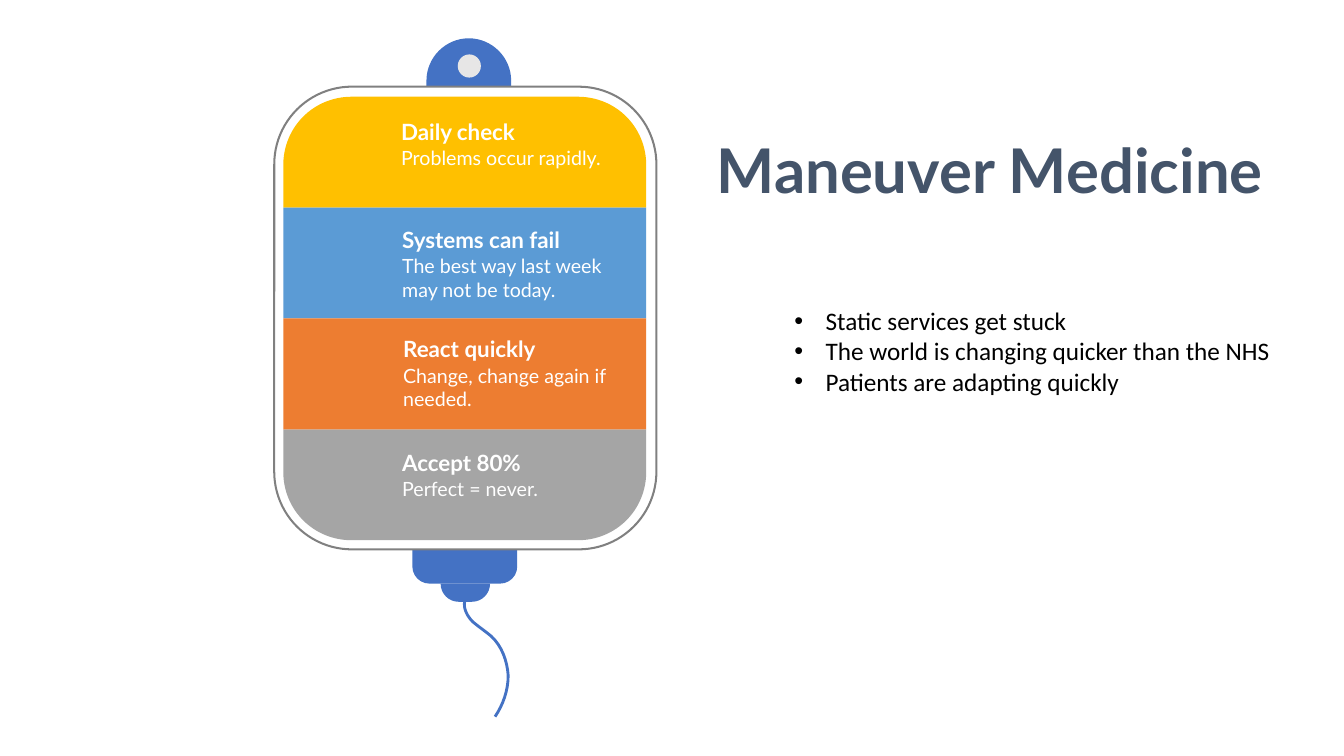
from lxml.etree import SubElement
from pptx import Presentation
from pptx.dml.color import RGBColor
from pptx.enum.shapes import MSO_SHAPE
from pptx.enum.text import MSO_AUTO_SIZE
from pptx.oxml.ns import qn
from pptx.util import Inches, Pt

COLORS = {
    "gold": "FFC000", "sky": "5B9BD5", "orange": "ED7D31", "gray": "A5A5A5",
    "edge": "808080", "blue": "4472C4", "hole": "E7E6E6",
    "title": "44546A", "white": "FFFFFF", "black": "000000",
}
color = {name: RGBColor.from_string(code) for name, code in COLORS.items()}

deck = Presentation()
deck.slide_width, deck.slide_height = Inches(13.33), Inches(7.5)
shapes = deck.slides.add_slide(deck.slide_layouts[6]).shapes


def add_outline(start, parts, close):
    """Draw an outline: a part of one point is a line, of three a cubic curve."""
    pen = shapes.build_freeform(Inches(start[0]), Inches(start[1]))
    points = [(Inches(x), Inches(y)) for part in parts for x, y in part]
    pen.add_line_segments(points, close=close)
    shape = pen.convert_to_shape()
    shape.shadow.inherit = False
    lines = iter(list(shape._element.iter(qn("a:lnTo"))))
    for part in parts:
        first, *rest = [next(lines) for point in part]
        if rest:
            first.tag = qn("a:cubicBezTo")
            for line in rest:
                first.append(line[0])
                line.getparent().remove(line)
    return shape


def add_text(left, top, width, height, lines, size, tone, font="Lato", bold=False, wrap=False):
    box = shapes.add_textbox(Inches(left), Inches(top), Inches(width), Inches(height))
    frame = box.text_frame
    frame.word_wrap = wrap
    frame.auto_size = MSO_AUTO_SIZE.NONE if wrap else MSO_AUTO_SIZE.SHAPE_TO_FIT_TEXT
    frame.text = "\n".join(lines)
    for para in frame.paragraphs:
        para.font.size = Pt(size)
        para.font.name = font
        para.font.bold = bold
        para.font.color.rgb = color[tone]
    return frame


# Gold and gray end bands: the gray one is the gold one turned upside down
LEFT, RIGHT, TOP, LOW = 2.81, 6.41, 0.96, 5.36
BAND_H, CURVE, PULL = 1.1, 0.68, 0.3
for edge, way, fill in [(TOP, 1, "gold"), (LOW, -1, "gray")]:
    base, bend, near = [edge + way * y for y in (BAND_H, CURVE, PULL)]
    band = add_outline((RIGHT, base), [
        [(LEFT, base)],
        [(LEFT, bend)],
        [(LEFT, near), (LEFT + PULL, edge), (LEFT + CURVE, edge)],
        [(RIGHT - CURVE, edge)],
        [(RIGHT - PULL, edge), (RIGHT, near), (RIGHT, bend)],
    ], True)
    band.fill.solid()
    band.fill.fore_color.rgb = color[fill]
    band.line.fill.background()

# Solid parts: kind, left, top, width, height, top and low corner share, fill
TAB, BOX, OVAL = MSO_SHAPE.ROUND_2_SAME_RECTANGLE, MSO_SHAPE.RECTANGLE, MSO_SHAPE.OVAL
solids = [
    (BOX, LEFT, 2.06, 3.6, BAND_H, [], "sky"),
    (BOX, LEFT, 3.16, 3.6, BAND_H, [], "orange"),
    (TAB, 4.09, 5.45, 1.04, 0.34, [0, 0.5], "blue"),
    (TAB, 4.37, 5.79, 0.49, 0.18, [0, 0.5], "blue"),
    (TAB, 4.23, 0.38, 0.84, 0.48, [0.5, 0], "blue"),
    (OVAL, 4.54, 0.54, 0.23, 0.23, [], "hole"),
]
# The spout and the hook are rounder than a tab allows
round_parts = {
    5.79: ((4.37, 5.79), [[(4.86, 5.79)],
                          [(4.86, 5.89), (4.78, 5.97), (4.68, 5.97)],
                          [(4.55, 5.97)],
                          [(4.45, 5.97), (4.37, 5.89), (4.37, 5.79)]]),
    0.38: ((4.65, 0.38), [[(4.42, 0.38), (4.23, 0.57), (4.23, 0.8)],
                          [(4.23, 0.86)], [(5.07, 0.86)], [(5.07, 0.8)],
                          [(5.07, 0.57), (4.88, 0.38), (4.65, 0.38)]]),
}
for kind, left, top, width, height, shares, fill in solids:
    if top in round_parts:
        part = add_outline(*round_parts[top], True)
    else:
        part = shapes.add_shape(kind, Inches(left), Inches(top), Inches(width), Inches(height))
        for i, share in enumerate(shares):
            part.adjustments[i] = share
    part.shadow.inherit = False
    part.fill.solid()
    part.fill.fore_color.rgb = color[fill]
    part.line.fill.background()

# Bag edge and tube
bag = shapes.add_shape(MSO_SHAPE.ROUNDED_RECTANGLE,
                       Inches(2.72), Inches(0.86), Inches(3.79), Inches(4.59))
bag.adjustments[0] = 0.77 / 3.79
bag.shadow.inherit = False
tube = add_outline((4.61, 5.96), [
    [(4.59, 6.04), (4.64, 6.12), (4.69, 6.17)],
    [(4.75, 6.22), (4.81, 6.26), (4.87, 6.31)],
    [(4.98, 6.41), (5.03, 6.56), (5.04, 6.7)],
    [(5.04, 6.85), (4.99, 6.99), (4.91, 7.11)],
], False)
for shape, tone, weight in [(bag, "edge", 1.45), (tube, "blue", 2.04)]:
    shape.fill.background()
    shape.line.color.rgb = color[tone]
    shape.line.width = Pt(weight)

# Bullets and title
points = [
    "Static services get stuck",
    "The world is changing quicker than the NHS",
    "Patients are adapting quickly",
]
frame = add_text(7.78, 2.98, 5.08, 1.28, points, 18, "black", font="Calibri", wrap=True)
for para in frame.paragraphs:
    props = para._p.get_or_add_pPr()
    props.set("marL", str(Inches(0.31)))
    props.set("indent", str(-Inches(0.31)))
    SubElement(props, qn("a:buFont")).set("typeface", "Arial")
    SubElement(props, qn("a:buChar")).set("char", "•")
    # The bullet must come before the default run style
    props.append(props.find(qn("a:defRPr")))

add_text(7.01, 1.26, 5.99, 0.84, ["Maneuver Medicine"], 44, "title", bold=True)

# Band labels: left, top, head, head width, body top, body lines, body width, body height
labels = [
    (3.88, 1.12, "Daily check", 1.44, 1.4, ["Problems occur rapidly."], 2.23, 0.34),
    (3.89, 2.19, "Systems can fail", 1.96, 2.47,
     ["The best way last week", "may not be today."], 2.24, 0.57),
    (3.9, 3.28, "React quickly", 1.65, 3.56,
     ["Change, change again if", "needed."], 2.38, 0.57),
    (3.89, 4.41, "Accept 80%", 1.46, 4.68, ["Perfect = never."], 1.58, 0.34),
]
for left, top, head, head_w, body_top, body, body_w, body_h in labels:
    add_text(left, body_top, body_w, body_h, body, 14, "white")
    add_text(left, top, head_w, 0.37, [head], 16, "white", bold=True)

deck.save("out.pptx")
